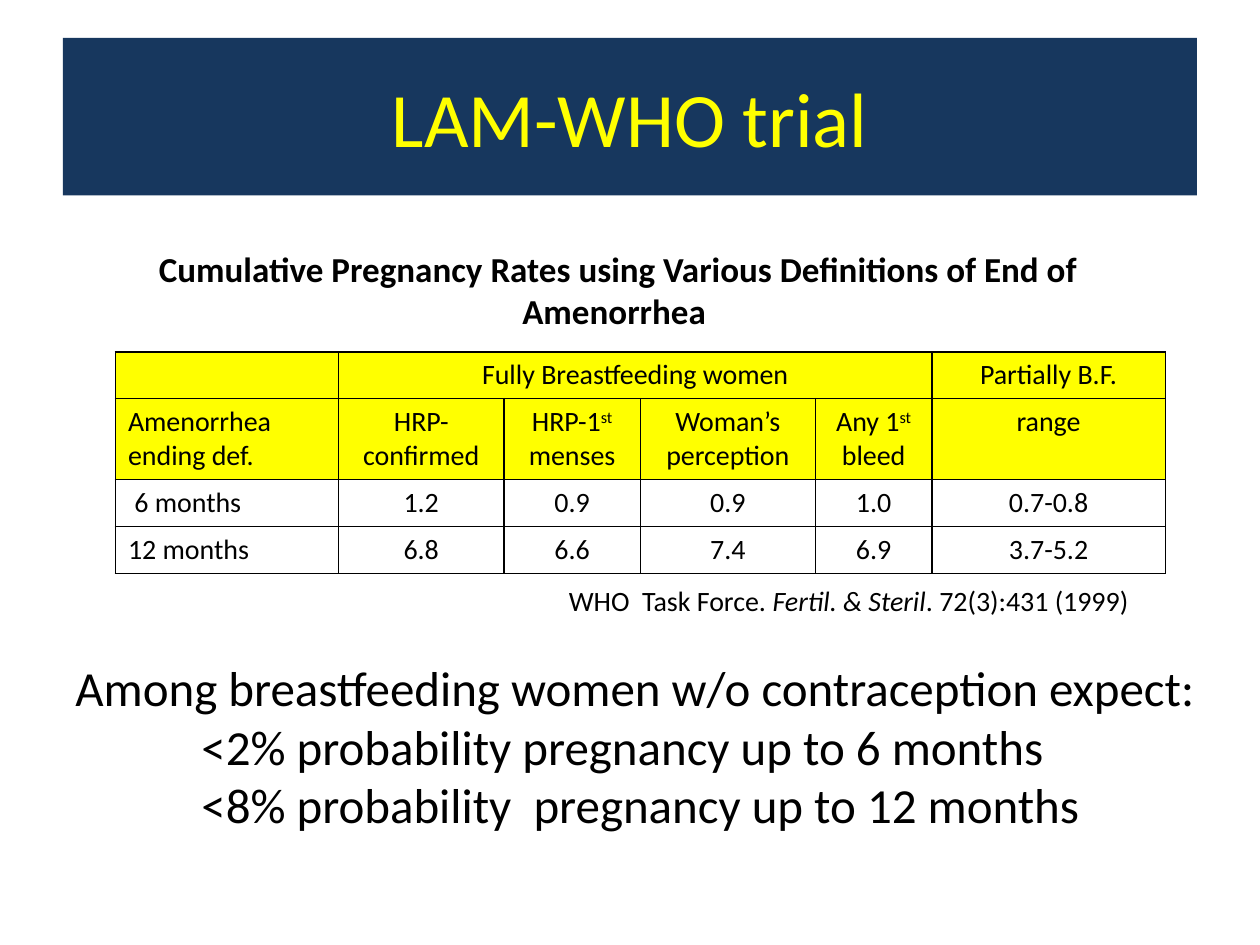
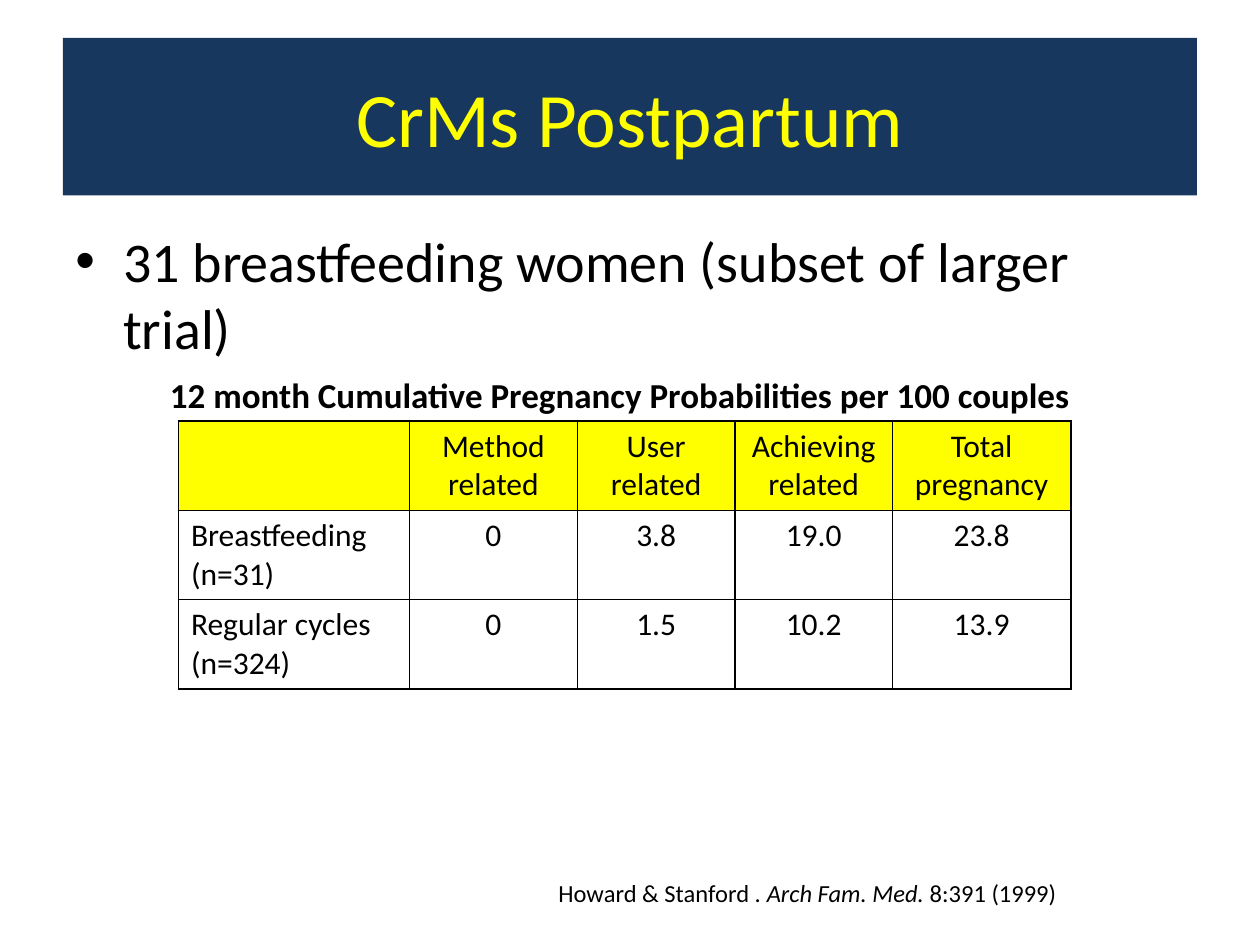
from lxml import etree
from pptx import Presentation
from pptx.dml.color import RGBColor
from pptx.enum.shapes import MSO_SHAPE
from pptx.enum.text import MSO_ANCHOR, PP_ALIGN
from pptx.oxml.ns import qn
from pptx.util import Emu, Inches, Pt

RECTANGLE = MSO_SHAPE.RECTANGLE
MIDDLE = MSO_ANCHOR.MIDDLE
LEFT, CENTER = PP_ALIGN.LEFT, PP_ALIGN.CENTER

FONT = "Calibri"
NAVY, YELLOW, BLACK = "17375E", "FFFF00", "000000"
UNIT = Inches(10) // 120  # the slide is 120 columns by 90 rows of square cells
TITLE_BOX = (6, 3.6, 108, 15)
ITALIC = {"italic": True}
SUPERSCRIPT = {"baseline": 30000}


def color(hex_value):
    return RGBColor.from_string(hex_value)


def grid(*cells):
    return [Emu(round(cell * UNIT)) for cell in cells]


def write_paragraph(paragraph, content, size, align=LEFT, ink=BLACK, **formats):
    """Write a string, or a list of (text, formats) runs, into a paragraph."""
    paragraph.alignment = align
    runs = [(content, {})] if isinstance(content, str) else content
    if not content:
        end = etree.SubElement(paragraph._p, qn("a:endParaRPr"))
        end.set("sz", str(size * 100))
        return
    for text, run_formats in runs:
        run = paragraph.add_run()
        run.text = text
        run.font.color.rgb = color(ink)
        values = {"name": FONT, "size": Pt(size), **formats, **run_formats}
        baseline = values.pop("baseline", None)
        for name, value in values.items():
            setattr(run.font, name, value)
        if baseline:
            run.font._element.set("baseline", str(baseline))


def write(frame, contents, size, **formats):
    """Write one paragraph per item and return the paragraphs."""
    for index, content in enumerate(contents):
        paragraph = frame.add_paragraph() if index else frame.paragraphs[0]
        write_paragraph(paragraph, content, size, **formats)
    return frame.paragraphs


def indent(paragraph, left, first=0, bullet=None):
    properties = paragraph._p.get_or_add_pPr()
    properties.set("marL", str(Inches(left)))
    properties.set("indent", str(Inches(first)))
    if bullet:
        etree.SubElement(properties, qn("a:buFont")).set("typeface", "Arial")
        etree.SubElement(properties, qn("a:buChar")).set("char", bullet)


def add_title_band(slide, text):
    band = slide.shapes.add_shape(RECTANGLE, *grid(*TITLE_BOX))
    band.shadow.inherit = False
    band.fill.solid()
    band.fill.fore_color.rgb = color(NAVY)
    band.line.fill.background()
    band.text_frame.word_wrap = True
    band.text_frame.vertical_anchor = MIDDLE
    write(band.text_frame, [text], 44, align=CENTER, ink=YELLOW)


def add_text(slide, box, contents, size, **formats):
    frame = slide.shapes.add_textbox(*grid(*box)).text_frame
    frame.word_wrap = True
    return write(frame, contents, size, **formats)


def add_borders(cell):
    properties = cell._tc.get_or_add_tcPr()
    for side in ("a:lnL", "a:lnR", "a:lnT", "a:lnB"):
        line = etree.SubElement(properties, qn(side), w=str(Pt(1)))
        fill = etree.SubElement(line, qn("a:solidFill"))
        etree.SubElement(fill, qn("a:srgbClr"), val=BLACK)


def add_data_table(slide, corner, widths, heights, rows, size, header_rows):
    """Each cell is a list of paragraphs, or a string for a single one."""
    box = grid(*corner, sum(widths), sum(heights))
    table = slide.shapes.add_table(len(rows), len(widths), *box).table
    table.first_row = table.horz_banding = False
    for column, width in zip(table.columns, grid(*widths)):
        column.width = width
    for row, height in zip(table.rows, grid(*heights)):
        row.height = height
    for row_index, row in enumerate(rows):
        for column_index, content in enumerate(row):
            cell = table.cell(row_index, column_index)
            add_borders(cell)
            if row_index < header_rows:
                cell.fill.solid()
                cell.fill.fore_color.rgb = color(YELLOW)
            else:
                cell.fill.background()
            contents = [content] if isinstance(content, str) else content
            align = CENTER if column_index else LEFT
            write(cell.text_frame, contents, size, align=align)
    return table


def build_trial_slide(slide):
    add_title_band(slide, "LAM-WHO trial")

    # Pregnancy rates table
    first_menses = [("HRP-1", {}), ("st", SUPERSCRIPT), (" menses", {})]
    any_bleed = [("Any 1", {}), ("st", SUPERSCRIPT), (" bleed", {})]
    table = add_data_table(
        slide, (11, 33.5), (21.25, 15.75, 13, 16.67, 11.1, 22.23),
        (4.45, 7.7, 4.45, 4.45),
        [
            ["", "Fully Breastfeeding women", "", "", "", "Partially B.F."],
            ["Amenorrhea ending def.", "HRP-confirmed", [first_menses],
             "Woman’s perception", [any_bleed], "range"],
            [" 6 months", "1.2", "0.9", "0.9", "1.0", "0.7-0.8"],
            ["12 months", "6.8", "6.6", "7.4", "6.9", "3.7-5.2"],
        ], size=16, header_rows=2)
    table.cell(0, 1).merge(table.cell(0, 4))

    # Caption and source
    add_text(slide, (11, 23, 95, 9.3),
             [" Cumulative Pregnancy Rates using Various Definitions of End of Amenorrhea"],
             20, align=CENTER, bold=True)
    add_text(slide, (53, 55, 60, 4.4),
             [[("WHO  Task Force. ", {}), ("Fertil. & Steril", ITALIC),
               (". 72(3):431 (1999)", {})]], 16)

    # Conclusion
    conclusion = add_text(slide, (6, 62, 112, 18.1), [
        "Among breastfeeding women w/o contraception expect:",
        "<2% probability pregnancy up to 6 months",
        "<8% probability  pregnancy up to 12 months"], 28)
    for paragraph in conclusion[1:]:
        indent(paragraph, 1)


def build_postpartum_slide(slide):
    add_title_band(slide, "CrMs Postpartum")

    # Study group
    study_group = add_text(slide, (6, 21, 108, 59.4),
                           ["31 breastfeeding women (subset of larger trial)"], 32)[0]
    study_group.space_before = Pt(6.4)
    indent(study_group, 0.38, -0.38, "•")

    # Pregnancy probabilities table
    add_data_table(
        slide, (17, 40.1), (22, 16, 15, 15, 17), [8.5] * 3,
        [
            ["", "Method related", "User related", "Achieving related",
             "Total pregnancy"],
            [["Breastfeeding", "(n=31)"], "0", "3.8", "19.0", "23.8"],
            [["Regular cycles", "(n=324)"], "0", "1.5", "10.2", "13.9"],
        ], size=18, header_rows=1)

    # Source and caption
    add_text(slide, (52, 83, 66, 4),
             [[("Howard & Stanford . ", {}), ("Arch Fam. Med.", ITALIC),
               (" 8:391 (1999)", {})]], 14)
    add_text(slide, (15, 35, 94, 5.25),
             ["12 month Cumulative Pregnancy Probabilities per 100 couples"],
             20, bold=True)


def main():
    presentation = Presentation()
    presentation.slide_width, presentation.slide_height = grid(120, 90)
    blank_layout = presentation.slide_layouts[6]
    for build in (build_trial_slide, build_postpartum_slide):
        build(presentation.slides.add_slide(blank_layout))
    presentation.save("out.pptx")


if __name__ == "__main__":
    main()
